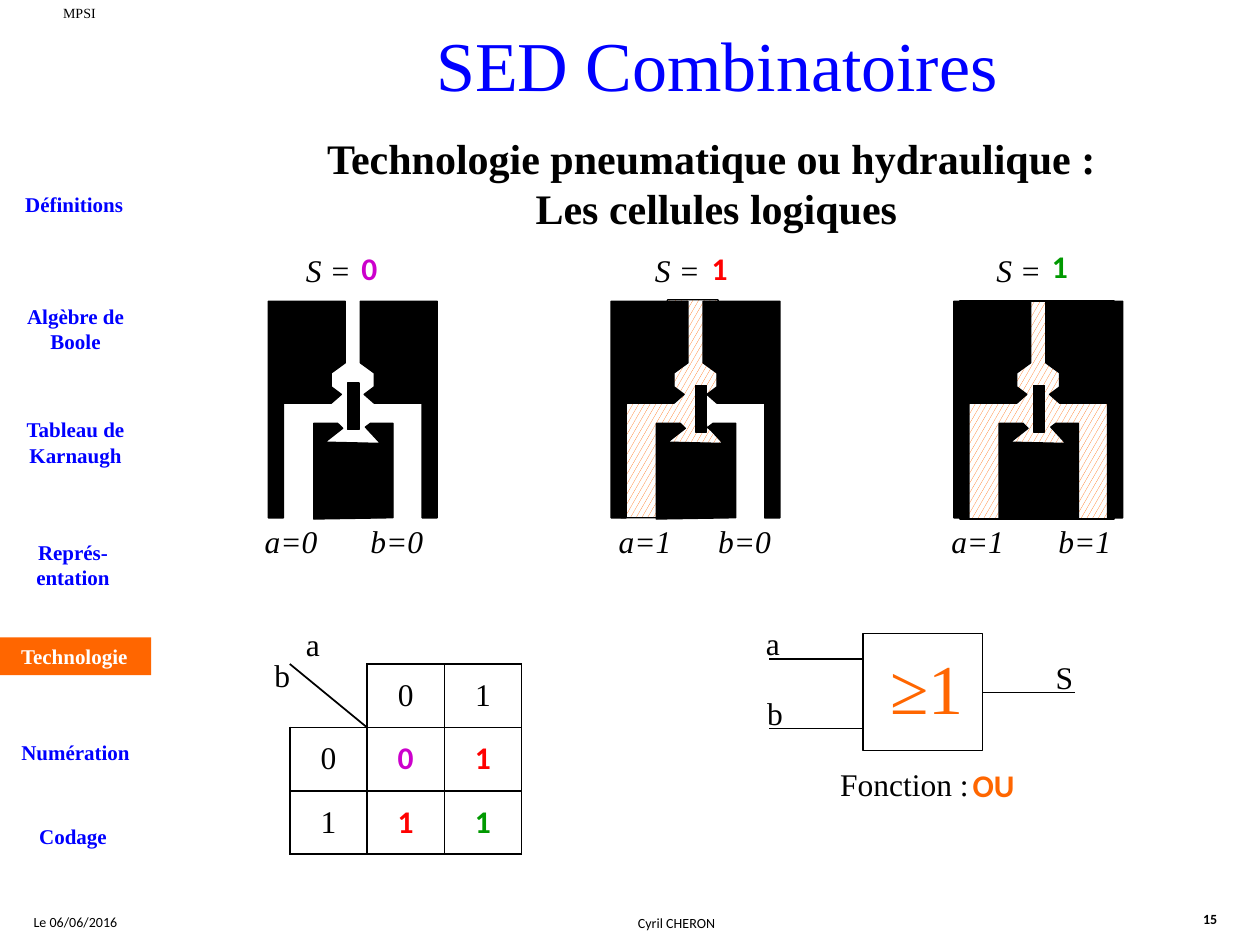
from lxml import etree
from pptx import Presentation
from pptx.dml.color import RGBColor
from pptx.enum.dml import MSO_PATTERN
from pptx.enum.shapes import MSO_CONNECTOR, MSO_SHAPE
from pptx.enum.text import MSO_ANCHOR, PP_ALIGN
from pptx.oxml.ns import qn
from pptx.util import Inches, Pt

COLORS = {
    "black": "000000", "white": "FFFFFF", "blue": "0000FF", "orange": "FF6600",
    "purple": "CC00CC", "red": "FF0000", "green": "009900",
}
SERIF, SANS = "Times New Roman", "Calibri"
LEFT, CENTER = PP_ALIGN.LEFT, PP_ALIGN.CENTER
DEFAULT_INSETS = (0.1, 0.05)
NO_INSETS = (0, 0)

# Navigation entries: text, left, top, height
NAVIGATION = [
    ("Définitions", 0.01, 1.47, 0.3),
    ("Algèbre de Boole", 0.02, 2.36, 0.5),
    ("Tableau de Karnaugh", 0.02, 3.26, 0.5),
    ("Représ-entation", 0, 4.23, 0.5),
    ("Numération", 0.02, 5.82, 0.3),
    ("Codage", 0, 6.49, 0.3),
]

# Valve outlines: x from the valve axis, y on the slide
HOUSING = [
    (-0.06, 2.39), (-0.67, 2.39), (-0.67, 4.11), (-0.55, 4.11), (-0.55, 3.2),
    (-0.17, 3.2), (-0.09, 3.13), (-0.17, 3.07), (-0.17, 2.96), (-0.06, 2.88),
]
SEAT = [
    (-0.31, 3.36), (-0.31, 4.12), (0.32, 4.11), (0.32, 3.36), (0.14, 3.36),
    (0.1, 3.39), (0.22, 3.52), (-0.22, 3.51), (-0.08, 3.4), (-0.12, 3.36),
]
LEFT_FLOW = [
    (-0.59, 4.11), (-0.29, 4.11), (0.25, 3.5), (0.09, 3.39), (0.05, 3.14),
    (0.19, 3.11), (0.18, 2.38), (-0.22, 2.38), (-0.61, 3.16),
]
FULL_FLOW = [(-0.62, 2.39), (0.6, 2.39), (0.6, 4.12), (-0.62, 4.12)]

# Valves: flow outline, slide piston (left, top), then texts with left and top
VALVES = [
    (None, (-0.04, 3.04), ("a=0", 2.1), ("b=0", 2.94),
     2.33, ("0", 2.77, 1.93, "purple")),
    (LEFT_FLOW, (0, 3.06), ("a=1", 4.91), ("b=0", 5.7),
     5.1, ("1", 5.55, 1.93, "red")),
    (FULL_FLOW, (-0.04, 3.06), ("a=1", 7.55), ("b=1", 8.4),
     7.81, ("1", 8.25, 1.91, "green")),
]
FIRST_AXIS, VALVE_PITCH = 2.8, 2.72

KARNAUGH = [
    [("", "black"), ("0", "black"), ("1", "black")],
    [("0", "black"), ("0", "purple"), ("1", "red")],
    [("1", "black"), ("1", "red"), ("1", "green")],
]
KARNAUGH_LEFT, KARNAUGH_TOP = 2.3, 5.27
COLUMN_WIDTH, ROW_HEIGHT = 1.84 / 3, 1.51 / 3


def rgb(name):
    return RGBColor.from_string(COLORS[name])


def write(frame, text, size=18, font=SERIF, color="black", align=LEFT, **styles):
    """Fill a text frame, one paragraph for each line of the text."""
    frame.text = text
    for paragraph in frame.paragraphs:
        paragraph.alignment = align
        settings = {"size": Pt(size), "name": font, **styles}
        for name, value in settings.items():
            setattr(paragraph.font, name, value)
        paragraph.font.color.rgb = rgb(color)


def set_insets(frame, insets):
    for side, value in zip(("left", "right", "top", "bottom"),
                           (insets[0], insets[0], insets[1], insets[1])):
        setattr(frame, f"margin_{side}", Inches(value))


def add_text(slide, text, left, top, width, height, insets=DEFAULT_INSETS,
             wrap=True, **styles):
    box = slide.shapes.add_textbox(*map(Inches, (left, top, width, height)))
    box.text_frame.word_wrap = wrap
    set_insets(box.text_frame, insets)
    write(box.text_frame, text, **styles)


def paint(shape, fill=None, line="black"):
    shape.shadow.inherit = False
    if fill == "flow":
        shape.fill.patterned()
        shape.fill.pattern = MSO_PATTERN.LARGE_CONFETTI
        shape.fill.fore_color.rgb = rgb("orange")
        shape.fill.back_color.rgb = rgb("white")
    elif fill:
        shape.fill.solid()
        shape.fill.fore_color.rgb = rgb(fill)
    else:
        shape.fill.background()
    if line:
        shape.line.color.rgb = rgb(line)
        shape.line.width = Pt(0.75)
    else:
        shape.line.fill.background()


def add_rectangle(slide, left, top, width, height, fill=None, line="black"):
    rectangle = slide.shapes.add_shape(
        MSO_SHAPE.RECTANGLE, *map(Inches, (left, top, width, height)))
    paint(rectangle, fill, line)
    return rectangle


def add_outline(slide, axis, points, fill, mirror=1):
    """Draw a closed outline on a grid of hundredths of an inch."""
    placed = [(round(100 * (axis + mirror * x)), round(100 * y)) for x, y in points]
    builder = slide.shapes.build_freeform(*placed[0], scale=Inches(0.01))
    builder.add_line_segments(placed[1:], close=True)
    paint(builder.convert_to_shape(), fill)


def add_line(slide, x1, y1, x2, y2, width=0.75):
    line = slide.shapes.add_connector(
        MSO_CONNECTOR.STRAIGHT, *map(Inches, (x1, y1, x2, y2)))
    line.line.color.rgb = rgb("black")
    line.line.width = Pt(width)
    etree.SubElement(line._element.spPr, qn("a:effectLst"))
    return line


def add_frame_texts(slide):
    """Footer, course label, titles and navigation."""
    small = {"size": 8, "font": SANS}
    add_text(slide, "Le 06/06/2016", 0.17, 7.2, 0.86, 0.24, (0.05, 0.05),
             wrap=False, align=CENTER, **small)
    add_text(slide, "Cyril CHERON", 1.25, 7.21, 8.24, 0.24, align=CENTER, **small)
    add_text(slide, "15", 9.45, 7.18, 0.39, 0.24, wrap=False, bold=True, **small)
    course = add_rectangle(slide, 0.32, 0.04, 0.62, 0.13, "white", None)
    set_insets(course.text_frame, NO_INSETS)
    write(course.text_frame, "MPSI", size=8, align=CENTER)
    add_text(slide, "SED Combinatoires", 2.43, 0.12, 6.52, 0.77, size=40,
             color="blue", align=CENTER)
    add_text(slide, "Technologie pneumatique ou hydraulique :\n Les cellules logiques",
             1.39, 1, 8.51, 0.91, size=24, bold=True, align=CENTER)
    for text, left, top, height in NAVIGATION:
        add_text(slide, text, left, top, 1.16, height, (0.04, 0.05), size=12,
                 color="blue", bold=True, align=CENTER)
    current = add_rectangle(slide, -0.02, 5.06, 1.22, 0.3, "orange", None)
    write(current.text_frame, "Technologie", size=12, color="white", bold=True,
          align=CENTER)


def add_valve(slide, axis, flow, piston, input_a, input_b, output_left, output):
    if flow:
        add_outline(slide, axis, flow, "flow")
    for mirror in (1, -1):
        add_outline(slide, axis, HOUSING, "black", mirror)
    add_outline(slide, axis, SEAT, "black")
    add_rectangle(slide, axis + piston[0], piston[1], 0.09, 0.37, "black")
    for text, left in (input_a, input_b):
        add_text(slide, text, left, 4.14, 0.57, 0.42, NO_INSETS, italic=True)
    add_text(slide, "S =", output_left, 1.94, 1.07, 0.46, italic=True)
    value, left, top, color = output
    add_text(slide, value, left, top, 0.33, 0.4, wrap=False, font=SANS,
             color=color, bold=True)


def set_borders(cell, sides):
    """Draw the given sides (of L, R, T, B) and clear the others."""
    properties = cell._tc.get_or_add_tcPr()
    for index, side in enumerate("LRTB"):
        border = etree.Element(qn(f"a:ln{side}"), w=str(Pt(1)))
        properties.insert(index, border)
        if side in sides:
            fill = etree.SubElement(border, qn("a:solidFill"))
            etree.SubElement(fill, qn("a:srgbClr"), val=COLORS["black"])
        else:
            etree.SubElement(border, qn("a:noFill"))


def add_karnaugh(slide):
    left, top = KARNAUGH_LEFT, KARNAUGH_TOP
    table = slide.shapes.add_table(3, 3, *map(Inches, (
        left, top, 3 * COLUMN_WIDTH, 3 * ROW_HEIGHT))).table
    table.first_row = table.horz_banding = False
    for row, values in enumerate(KARNAUGH):
        for column, (text, color) in enumerate(values):
            cell = table.cell(row, column)
            is_result = row > 0 and column > 0
            write(cell.text_frame, text, font=SANS if is_result else SERIF,
                  color=color, bold=is_result, align=CENTER)
            set_insets(cell, DEFAULT_INSETS)
            cell.vertical_anchor = MSO_ANCHOR.MIDDLE
            cell.fill.background()
            set_borders(cell, "LRTB" if row or column else "RB")
    add_line(slide, left, top, left + COLUMN_WIDTH, top + ROW_HEIGHT, 1)
    add_text(slide, "a", 2.33, 4.91, 0.6, 0.4)
    add_text(slide, "b", 2.08, 5.16, 0.6, 0.4)


def add_gate(slide):
    gate = add_rectangle(slide, 6.85, 5.03, 0.95, 0.93)
    for y in (5.23, 5.78):
        add_line(slide, 6.85, y, 6.1, y)
    output = add_line(slide, 8.53, 5.5, 7.8, 5.5)
    output.end_connect(gate, 3)
    output.begin_y = output.end_y
    for text, left, top in (("a", 5.98, 4.9), ("b", 5.99, 5.46), ("S", 8.28, 5.17)):
        add_text(slide, text, left, top, 0.33, 0.4, wrap=False)
    add_text(slide, "≥1", 6.97, 5.07, 0.78, 0.77, wrap=False, size=40, color="orange")
    add_text(slide, "Fonction :", 6.57, 6.02, 1.22, 0.4, wrap=False)
    add_text(slide, "OU", 7.62, 6.03, 0.58, 0.4, wrap=False, font=SANS,
             color="orange", bold=True)


def main():
    presentation = Presentation()
    presentation.slide_width, presentation.slide_height = Inches(10), Inches(7.5)
    slide = presentation.slides.add_slide(presentation.slide_layouts[6])
    add_frame_texts(slide)
    for index, valve in enumerate(VALVES):
        add_valve(slide, FIRST_AXIS + index * VALVE_PITCH, *valve)
    add_karnaugh(slide)
    add_gate(slide)
    presentation.save("out.pptx")


if __name__ == "__main__":
    main()
